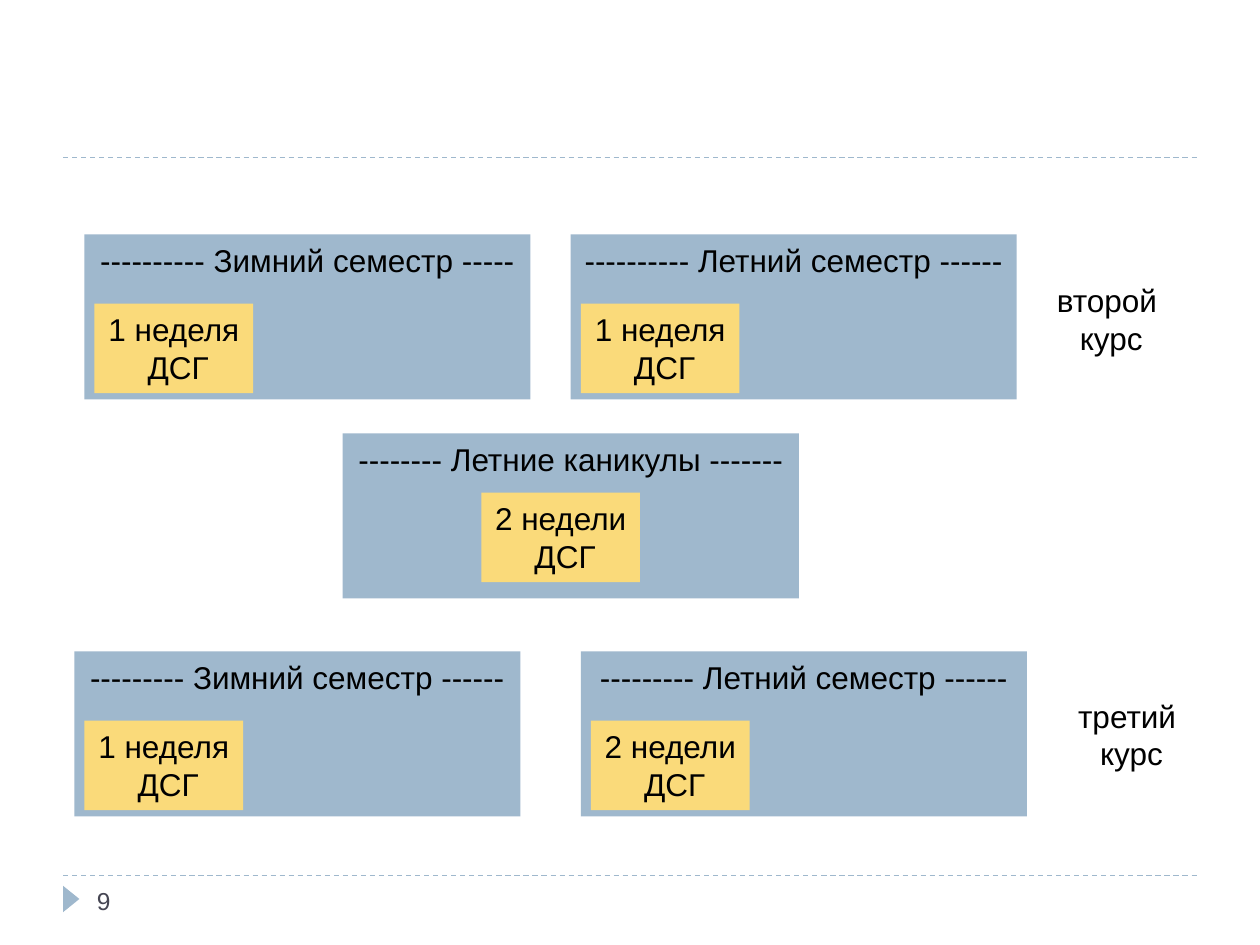
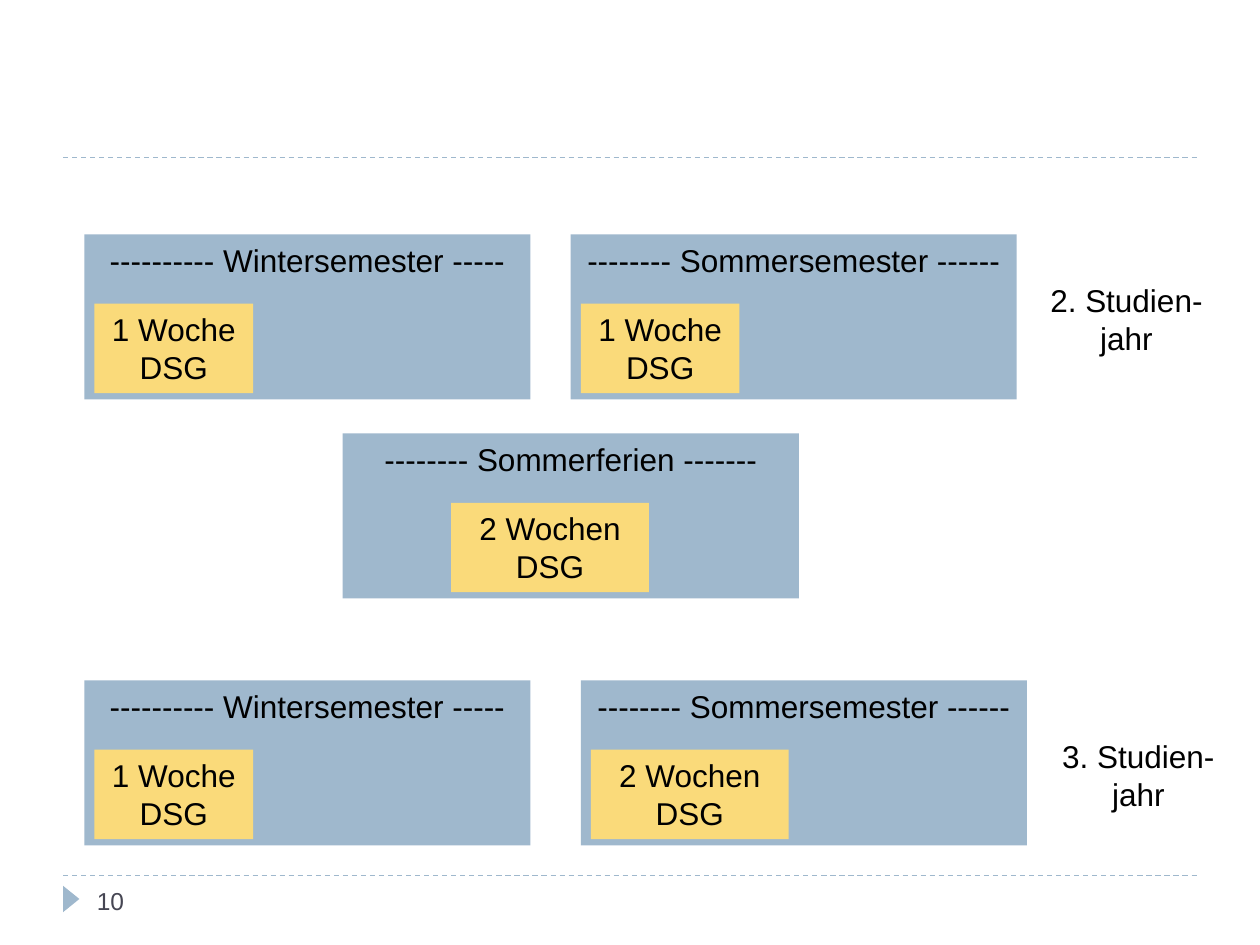
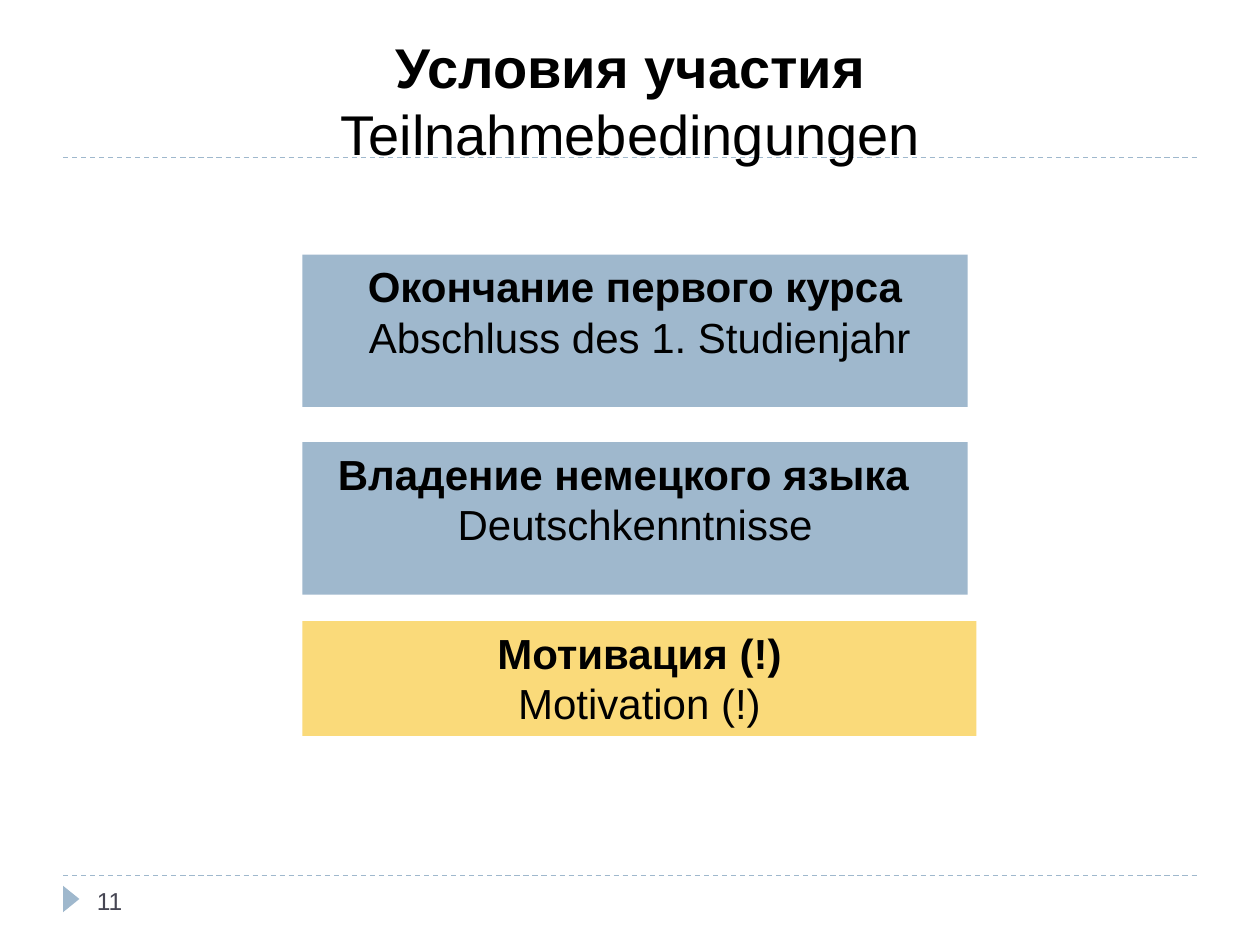
import pptx
import pptx.util
import pptx.dml.color
import pptx.enum.dml
import pptx.enum.shapes
import pptx.enum.text
import lxml.etree

Inches, Pt = pptx.util.Inches, pptx.util.Pt
SHAPE = pptx.enum.shapes.MSO_SHAPE
ANCHOR = pptx.enum.text.MSO_ANCHOR
ALIGN = pptx.enum.text.PP_ALIGN

COLORS = {"blue": "9FB8CD", "yellow": "FADA7A", "text": "000000", "number": "464653"}
FONT = "Arial"

# Content: a term is (left, top, width, heading, badge text, badge width, badge dx, badge dy)
TERM_W, BREAK_W, TERM_H = 3.54, 3.62, 1.31
WEEK_W, WEEKS_W, BADGE_H = 1.26, 1.57, 0.71
DX, DY = 0.08, 0.55

SCHEDULES = [
    {
        "number": 9,
        "terms": [
            (0.67, 1.86, TERM_W, "---------- Зимний семестр -----", "1 неделя\n ДСГ", WEEK_W, DX, DY),
            (4.53, 1.86, TERM_W, "---------- Летний семестр ------", "1 неделя\n ДСГ", WEEK_W, DX, DY),
            (2.72, 3.44, BREAK_W, "-------- Летние каникулы -------", "2 недели\n ДСГ", WEEK_W, 1.1, 0.47),
            (0.59, 5.17, TERM_W, "--------- Зимний семестр ------", "1 неделя\n ДСГ", WEEK_W, DX, DY),
            (4.61, 5.17, TERM_W, "--------- Летний семестр ------", "2 недели\n ДСГ", WEEK_W, DX, DY),
        ],
        "years": [
            (8.23, 2.18, 1.18, ["второй ", "курс"]),
            (8.39, 5.48, 1.18, ["третий ", "курс"]),
        ],
    },
    {
        "number": 10,
        "terms": [
            (0.67, 1.86, TERM_W, "---------- Wintersemester -----", "1 Woche DSG", WEEK_W, DX, DY),
            (4.53, 1.86, TERM_W, "-------- Sommersemester ------", "1 Woche DSG", WEEK_W, DX, DY),
            (2.72, 3.44, BREAK_W, "-------- Sommerferien -------", "2 Wochen DSG", WEEKS_W, 0.86, DY),
            (0.67, 5.4, TERM_W, "---------- Wintersemester -----", "1 Woche DSG", WEEK_W, DX, DY),
            (4.61, 5.4, TERM_W, "-------- Sommersemester ------", "2 Wochen DSG", WEEKS_W, DX, DY),
        ],
        "years": [
            (8.23, 2.18, 1.42, ["2. Studien-jahr"]),
            (8.23, 5.8, 1.61, ["3. Studien-jahr"]),
        ],
    },
]

TITLE = ["Условия участия", "Teilnahmebedingungen"]
CONDITIONS = [
    (2.02, 5.28, 1.21, "blue", ["Окончание первого курса", " Abschluss des 1. Studienjahr"]),
    (3.51, 5.28, 1.21, "blue", ["Владение немецкого языка  ", "Deutschkenntnisse"]),
    (4.93, 5.35, 0.91, "yellow", ["Мотивация (!)", "Motivation (!)"]),
]


def rgb(name):
    return pptx.dml.color.RGBColor.from_string(COLORS[name])


def write(sp, lines, size=18, color="text", align=ALIGN.CENTER, anchor=ANCHOR.TOP, bold_first=False):
    """Put one paragraph per line into a shape."""
    tf = sp.text_frame
    tf.word_wrap = True
    tf.vertical_anchor = anchor
    for i, line in enumerate(lines):
        p = tf.add_paragraph() if i else tf.paragraphs[0]
        p.text = line
        p.alignment = align
        for r in p.runs:
            r.font.name, r.font.size = FONT, Pt(size)
            r.font.color.rgb = rgb(color)
            r.font.bold = bold_first and i == 0


def add_block(s, at, fill, kind=SHAPE.RECTANGLE):
    sp = s.shapes.add_shape(kind, *map(Inches, at))
    sp.shadow.inherit = False
    sp.fill.solid()
    sp.fill.fore_color.rgb = rgb(fill)
    sp.line.fill.background()
    return sp


def add_text(s, at, lines, **style):
    write(s.shapes.add_textbox(*map(Inches, at)), lines, **style)


def add_rule(s, y):
    line = s.shapes.add_connector(
        pptx.enum.shapes.MSO_CONNECTOR.STRAIGHT, Inches(0.5), Inches(y), Inches(9.5), Inches(y))
    line.line.color.rgb = rgb("blue")
    line.line.width = Pt(0.75)
    line.line.dash_style = pptx.enum.dml.MSO_LINE.DASH
    lxml.etree.SubElement(line._element.spPr, pptx.oxml.ns.qn("a:effectLst"))


def new_slide(prs, number):
    """Blank slide with the shared rules, marker and slide number."""
    s = prs.slides.add_slide(prs.slide_layouts[6])
    for y in (6.95, 1.25):
        add_rule(s, y)
    add_block(s, (0.46, 7.07, 0.21, 0.13), "blue", SHAPE.ISOSCELES_TRIANGLE).rotation = 90
    add_text(s, (0.67, 6.95, 2.17, 0.4), [str(number)], size=14, color="number",
             align=ALIGN.LEFT, anchor=ANCHOR.MIDDLE)
    return s


def add_schedule(prs, schedule):
    s = new_slide(prs, schedule["number"])
    for x, y, w, heading, badge, badge_w, dx, dy in schedule["terms"]:
        write(add_block(s, (x, y, w, TERM_H), "blue"), [heading])
        write(add_block(s, (x + dx, y + dy, badge_w, BADGE_H), "yellow"), [badge])
    for x, y, w, lines in schedule["years"]:
        add_text(s, (x, y, w, BADGE_H), lines)


def add_conditions(prs):
    s = new_slide(prs, 11)
    add_text(s, (0.91, 0.21, 8.19, 1.18), TITLE, size=32, bold_first=True)
    for y, w, h, fill, lines in CONDITIONS:
        write(add_block(s, (2.4, y, w, h), fill), lines, size=24, bold_first=True)


def main():
    prs = pptx.Presentation()
    prs.slide_width, prs.slide_height = Inches(10), Inches(7.5)
    for schedule in SCHEDULES:
        add_schedule(prs, schedule)
    add_conditions(prs)
    prs.save("out.pptx")


if __name__ == "__main__":
    main()
